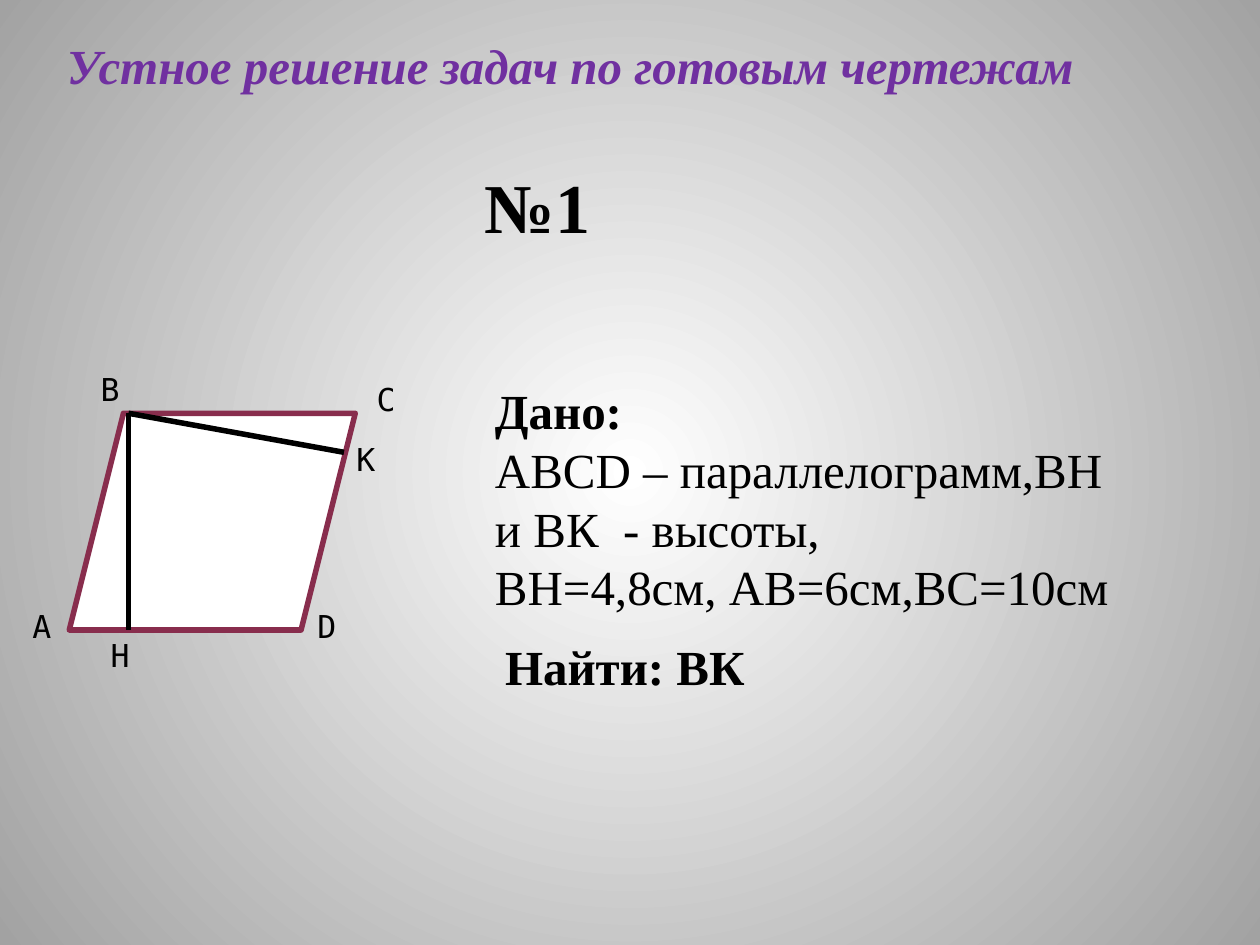
from lxml.etree import SubElement
from pptx import Presentation
from pptx.dml.color import RGBColor
from pptx.enum.shapes import MSO_CONNECTOR, MSO_SHAPE
from pptx.enum.text import MSO_ANCHOR, MSO_AUTO_SIZE, PP_ALIGN
from pptx.oxml.ns import qn
from pptx.util import Inches, Pt

COLORS = {"white": "FFFFFF", "edge": "A2A2A2", "title": "7030A0",
          "outline": "882D4D", "ink": "000000"}
COLUMNS, ROWS = 100, 75
SERIF, MONO = "Times New Roman", "DejaVu Sans Mono"
LINE_WIDTH = Pt(3.15)


def color(name):
    return RGBColor.from_string(COLORS[name])


class SlideBuilder:
    def __init__(self, presentation):
        self.column = presentation.slide_width / COLUMNS
        self.row = presentation.slide_height / ROWS
        self.slide = presentation.slides.add_slide(presentation.slide_layouts[6])

    def place(self, *lengths):
        units = (self.column, self.row) * 2
        return [round(length * unit) for length, unit in zip(lengths, units)]

    def radial_background(self, center, edge):
        fill = self.slide.background.fill
        fill.gradient()
        for stop, name in zip(fill.gradient_stops, (center, edge)):
            stop.color.rgb = color(name)
        # Swap the linear direction for a circle around the centre
        properties = self.slide.background._cSld.bg.bgPr
        gradient = properties.find(qn("a:gradFill"))
        gradient.remove(gradient.find(qn("a:lin")))
        circle = SubElement(gradient, qn("a:path"), {"path": "circle"})
        SubElement(circle, qn("a:fillToRect"), dict.fromkeys("ltrb", "50000"))

    def text(self, box, paragraphs, size=28, font=SERIF, ink="ink", wrap=False,
             align=PP_ALIGN.LEFT, anchor=MSO_ANCHOR.TOP, **formats):
        frame = self.slide.shapes.add_textbox(*self.place(*box)).text_frame
        frame.word_wrap = wrap
        frame.auto_size = MSO_AUTO_SIZE.SHAPE_TO_FIT_TEXT
        frame.vertical_anchor = anchor
        for index, (words, bold) in enumerate(paragraphs):
            paragraph = frame.paragraphs[0] if index == 0 else frame.add_paragraph()
            paragraph.alignment = align
            run = paragraph.add_run()
            run.text = words
            values = {"size": Pt(size), "name": font, "bold": bold, **formats}
            for name, value in values.items():
                setattr(run.font, name, value)
            run.font.color.rgb = color(ink)

    def parallelogram(self, box):
        shape = self.slide.shapes.add_shape(MSO_SHAPE.PARALLELOGRAM, *self.place(*box))
        shape.shadow.inherit = False
        shape.fill.solid()
        shape.fill.fore_color.rgb = color("white")
        shape.line.color.rgb = color("outline")
        shape.line.width = LINE_WIDTH

    def segment(self, start, end):
        connector = self.slide.shapes.add_connector(
            MSO_CONNECTOR.STRAIGHT, *self.place(*start, *end))
        connector.line.color.rgb = color("ink")
        connector.line.width = LINE_WIDTH
        SubElement(connector._element.spPr, qn("a:effectLst"))


def main():
    presentation = Presentation()
    presentation.slide_width, presentation.slide_height = Inches(10), Inches(7.5)
    builder = SlideBuilder(presentation)
    builder.radial_background("white", "edge")

    # Title and problem number
    builder.text((3.9, 2.3, 82.7, 5.7),
                 [("Устное решение задач по готовым чертежам", True)],
                 ink="title", italic=True, align=PP_ALIGN.CENTER,
                 anchor=MSO_ANCHOR.MIDDLE)
    builder.text((37.5, 12.5, 14.1, 7.7), [("№1", True)], size=40, wrap=True)

    # Parallelogram with its two heights
    top, base = 32.8, 50
    vertex_b = (10.2, top)
    builder.parallelogram((5.5, top, 22.7, base - top))
    for foot in ((10.2, base), (27.3, 35.9)):
        builder.segment(vertex_b, foot)

    # Point names
    points = {"A": (1.6, 47.7), "B": (7, 28.9), "C": (28.9, 29.7),
              "D": (24.2, 47.7), "Н": (7.8, base), "К": (27.3, 34.4)}
    for name, corner in points.items():
        builder.text((*corner, 3.6, 4), [(name, False)], size=18, font=MONO)

    # Given and to find
    builder.text((38.3, 29.7, 51.2, 24.6),
                 [("Дано:", True),
                  ("АВСD – параллелограмм,BH и ВК  - высоты,", False),
                  ("ВН=4,8см, АВ=6см,ВС=10см", False)], wrap=True)
    builder.text((39.1, base, 21.2, 5.7), [("Найти: ВК", True)])

    presentation.save("out.pptx")


if __name__ == "__main__":
    main()
